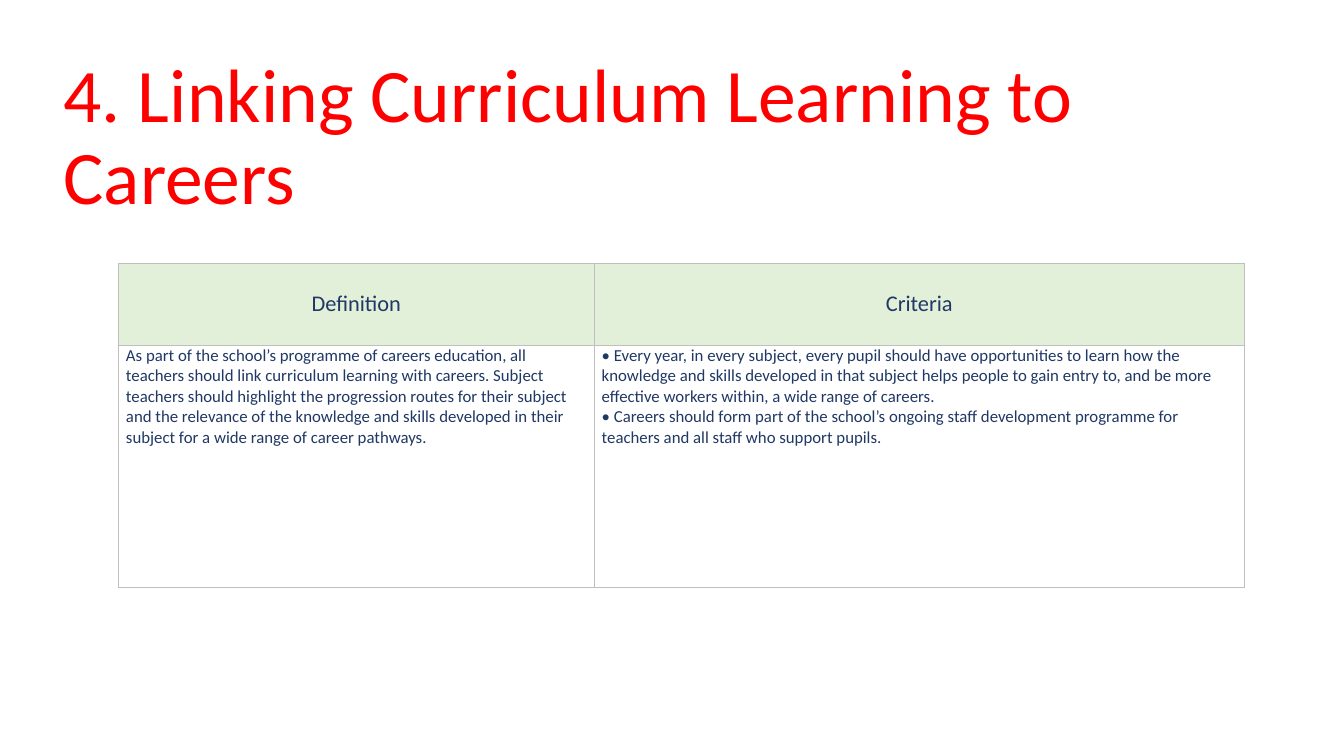
"""Build the slide on linking curriculum learning to careers."""
from lxml import etree
from pptx import Presentation
from pptx import util as u
from pptx.dml.color import RGBColor
from pptx.enum import text
from pptx.oxml import ns

THEME = {
    "font": "Calibri",
    "title": {"size": 54, "color": "FF0000"},
    "header": {"size": 16, "color": "1F3864"},
    "body": {"size": 12, "color": "1F3864"},
    "header_fill": "E2EFD9",
    "border": "BFBFBF",
}
COLUMN_WIDTHS = (339.84, 464.4)
ROW_HEIGHTS = (58.6, 172.8)
ROWS = [
    [["Definition"], ["Criteria"]],
    [
        ["As part of the school’s programme of careers education, all teachers should "
         "link curriculum learning with careers. Subject teachers should highlight the "
         "progression routes for their subject and the relevance of the knowledge and "
         "skills developed in their subject for a wide range of career pathways."],
        ["• Every year, in every subject, every pupil should have opportunities to learn "
         "how the knowledge and skills developed in that subject helps people to gain "
         "entry to, and be more effective workers within, a wide range of careers.",
         "• Careers should form part of the school’s ongoing staff development programme "
         "for teachers and all staff who support pupils."],
    ],
]


def write(frame, lines, role, align, spacing=1.0):
    """Fill a text frame with one formatted paragraph per line."""
    style = THEME[role]
    for index, line in enumerate(lines):
        para = frame.paragraphs[0] if index == 0 else frame.add_paragraph()
        para.alignment, para.line_spacing = align, spacing
        span = para.add_run()
        span.text = line
        formats = {"name": THEME["font"], "size": u.Pt(style["size"]), "bold": False}
        for name, value in formats.items():
            setattr(span.font, name, value)
        span.font.color.rgb = RGBColor.from_string(style["color"])


def add_borders(cell):
    """Draw a thin line on all four sides of a table cell."""
    properties = cell._tc.get_or_add_tcPr()
    for side in ("a:lnL", "a:lnR", "a:lnT", "a:lnB"):
        line = etree.SubElement(properties, ns.qn(side), w=str(u.Pt(1)))
        fill = etree.SubElement(line, ns.qn("a:solidFill"))
        etree.SubElement(fill, ns.qn("a:srgbClr"), val=THEME["border"])


deck = Presentation()
deck.slide_width, deck.slide_height = u.Pt(960), u.Pt(540)
page = deck.slides.add_slide(deck.slide_layouts[5])

title = page.shapes.title
place = {"left": 38.2, "top": 46.1, "width": 908.6, "height": 115.2}
for name, value in place.items():
    setattr(title, name, u.Pt(value))
frame = title.text_frame
frame.word_wrap = True
frame.auto_size = text.MSO_AUTO_SIZE.NONE
frame.vertical_anchor = text.MSO_ANCHOR.BOTTOM
write(frame, ["4. Linking Curriculum Learning to Careers"], "title", text.PP_ALIGN.LEFT, 0.9)

table = page.shapes.add_table(
    len(ROWS), len(COLUMN_WIDTHS), u.Pt(84.6), u.Pt(188),
    u.Pt(sum(COLUMN_WIDTHS)), u.Pt(sum(ROW_HEIGHTS))).table
table.first_row = table.horz_banding = False
for column, width in zip(table.columns, COLUMN_WIDTHS):
    column.width = u.Pt(width)
for row, height in zip(table.rows, ROW_HEIGHTS):
    row.height = u.Pt(height)

margins = {"margin_left": 5.4, "margin_right": 5.4, "margin_top": 0, "margin_bottom": 0}
for row_index, row in enumerate(ROWS):
    is_header = row_index == 0
    for column_index, lines in enumerate(row):
        cell = table.cell(row_index, column_index)
        for name, value in margins.items():
            setattr(cell, name, u.Pt(value))
        add_borders(cell)
        if is_header:
            cell.fill.solid()
            cell.fill.fore_color.rgb = RGBColor.from_string(THEME["header_fill"])
            cell.vertical_anchor = text.MSO_ANCHOR.MIDDLE
            write(cell.text_frame, lines, "header", text.PP_ALIGN.CENTER)
        else:
            cell.fill.background()
            cell.vertical_anchor = text.MSO_ANCHOR.TOP
            write(cell.text_frame, lines, "body", text.PP_ALIGN.LEFT)

deck.save("out.pptx")
